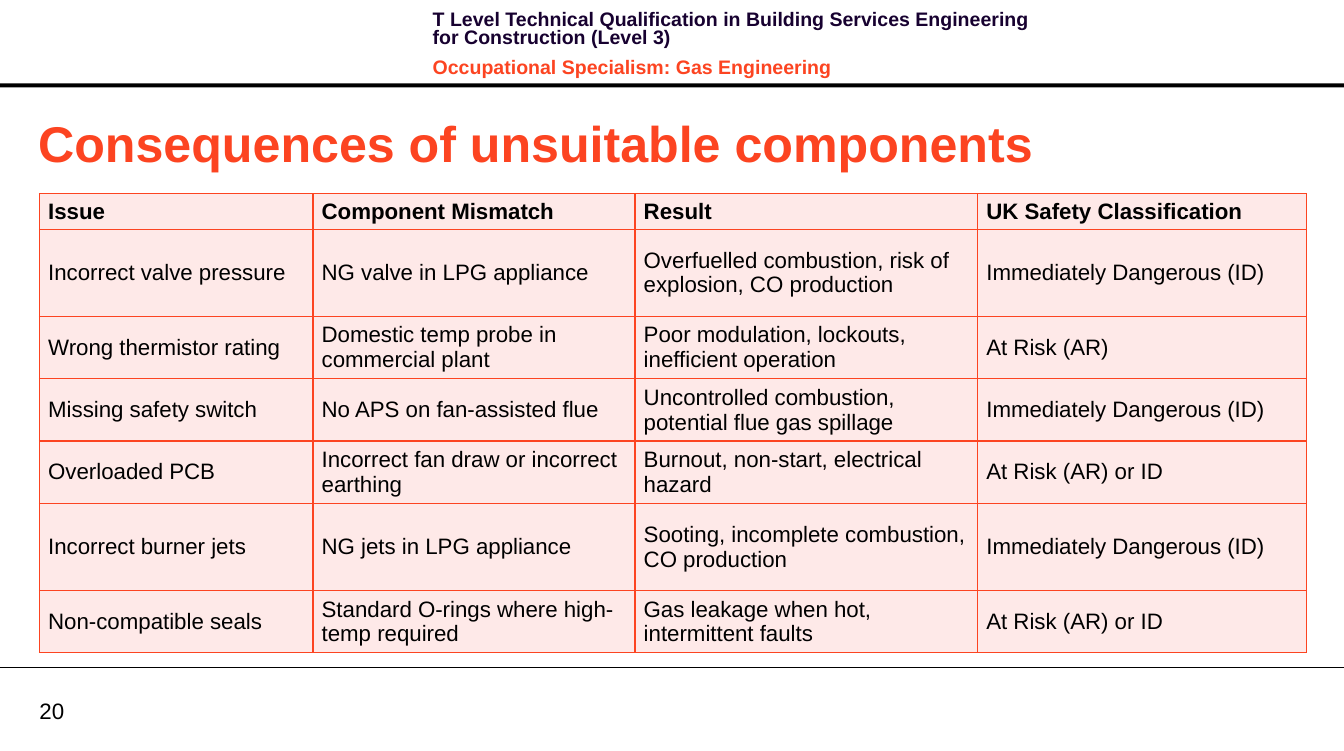
"""Build the slide on the consequences of unsuitable gas components."""
from dataclasses import dataclass

import pptx
import pptx.dml.color
import pptx.enum.shapes
import pptx.enum.text
import pptx.oxml
import pptx.oxml.ns
import pptx.util
from pptx.util import Cm, Pt

TITLE = "Consequences of unsuitable components"
QUALIFICATION = "T Level Technical Qualification in Building Services Engineering for Construction (Level 3)"
SPECIALISM = "Occupational Specialism: Gas Engineering"
PAGE_NUMBER = "20"
ROWS = [
    ("Issue", "Component Mismatch", "Result", "UK Safety Classification"),
    ("Incorrect valve pressure", "NG valve in LPG appliance",
     "Overfuelled combustion, risk of explosion, CO production", "Immediately Dangerous (ID)"),
    ("Wrong thermistor rating", "Domestic temp probe in commercial plant",
     "Poor modulation, lockouts, inefficient operation", "At Risk (AR)"),
    ("Missing safety switch", "No APS on fan-assisted flue",
     "Uncontrolled combustion, potential flue gas spillage", "Immediately Dangerous (ID)"),
    ("Overloaded PCB", "Incorrect fan draw or incorrect earthing",
     "Burnout, non-start, electrical hazard", "At Risk (AR) or ID"),
    ("Incorrect burner jets", "NG jets in LPG appliance",
     "Sooting, incomplete combustion, CO production", "Immediately Dangerous (ID)"),
    ("Non-compatible seals", "Standard O-rings where high-temp required",
     "Gas leakage when hot, intermittent faults", "At Risk (AR) or ID"),
]
HEADER_HEIGHT, SHORT_HEIGHT, TALL_HEIGHT = 0.89, 1.55, 2.21
ROW_HEIGHTS = [HEADER_HEIGHT, TALL_HEIGHT, SHORT_HEIGHT, SHORT_HEIGHT,
               SHORT_HEIGHT, TALL_HEIGHT, SHORT_HEIGHT]
COLUMN_WIDTHS = [6.92, 8.15, 8.67, 8.33]
SLIDE_WIDTH, SLIDE_HEIGHT = 34.01, 19


@dataclass(frozen=True)
class Theme:
    """Colours, font and type sizes of the slide."""
    accent: str = "FC4421"
    navy: str = "170130"
    black: str = "000000"
    tint: str = "FEE9E8"
    font: str = "Arial"
    title_size: int = 36
    header_size: int = 14
    body_size: int = 16


THEME = Theme()


def rgb(colour):
    """Turn a hex string into a colour."""
    return pptx.dml.color.RGBColor.from_string(colour)


def add_run(paragraph, text, size, colour, bold=False):
    """Add one formatted run to a paragraph."""
    run = paragraph.add_run()
    run.text = text
    run.font.name = THEME.font
    run.font.size = Pt(size)
    run.font.bold = bold
    run.font.color.rgb = rgb(colour)


def add_text_frame(slide, left, top, width, height):
    """Add a wrapping text box and return its frame."""
    frame = slide.shapes.add_textbox(Cm(left), Cm(top), Cm(width), Cm(height)).text_frame
    frame.word_wrap = True
    return frame


def add_header(slide):
    """Add the heavy rule and the two header paragraphs."""
    rule = slide.shapes.add_shape(
        pptx.enum.shapes.MSO_SHAPE.RECTANGLE, 0, Cm(2.11), Cm(SLIDE_WIDTH), Cm(0.1))
    rule.shadow.inherit = False
    rule.fill.solid()
    rule.fill.fore_color.rgb = rgb(THEME.black)
    rule.line.fill.background()
    frame = add_text_frame(slide, 10.7, 0.18, 16.18, 1.63)
    qualification, specialism = frame.paragraphs[0], frame.add_paragraph()
    specialism.space_before = Pt(4)
    for paragraph, text, colour in ((qualification, QUALIFICATION, THEME.navy),
                                    (specialism, SPECIALISM, THEME.accent)):
        paragraph.line_spacing = Pt(13.1)
        paragraph.space_after = Pt(4)
        add_run(paragraph, text, THEME.header_size, colour, True)


def add_footer(slide):
    """Add the thin rule and the page number."""
    rule = slide.shapes.add_connector(
        pptx.enum.shapes.MSO_CONNECTOR.STRAIGHT, 0, Cm(16.9), Cm(SLIDE_WIDTH), Cm(16.9))
    rule.line.color.rgb = rgb(THEME.black)
    rule.line.width = Pt(0.75)
    properties = rule._element.spPr
    properties.append(properties.makeelement(pptx.oxml.ns.qn("a:effectLst"), {}))
    frame = add_text_frame(slide, 1, 17.63, 1.63, 0.69)
    frame.margin_left = frame.margin_right = frame.margin_top = frame.margin_bottom = 0
    frame.vertical_anchor = pptx.enum.text.MSO_ANCHOR.MIDDLE
    add_run(frame.paragraphs[0], PAGE_NUMBER, THEME.body_size, THEME.black)


def add_title(slide):
    """Place and fill the title placeholder."""
    title = slide.shapes.title
    title.left, title.top, title.width, title.height = Cm(0.71), Cm(2.7), Cm(32.3), Cm(1.8)
    frame = title.text_frame
    frame.word_wrap = True
    frame.vertical_anchor = pptx.enum.text.MSO_ANCHOR.MIDDLE
    paragraph = frame.paragraphs[0]
    paragraph.alignment = pptx.enum.text.PP_ALIGN.LEFT
    add_run(paragraph, TITLE, THEME.title_size, THEME.accent, True)


def set_borders(cell):
    """Draw an accent line on all four sides of a cell."""
    properties = cell._tc.get_or_add_tcPr()
    for index, side in enumerate(("lnL", "lnR", "lnT", "lnB")):
        properties.insert(index, pptx.oxml.parse_xml(
            f'<a:{side} {pptx.oxml.ns.nsdecls("a")} w="{Pt(1)}"><a:solidFill>'
            f'<a:srgbClr val="{THEME.accent}"/></a:solidFill></a:{side}>'))


def add_issue_table(slide):
    """Add the table of issues, mismatches, results and classes."""
    table = slide.shapes.add_table(
        len(ROWS), len(COLUMN_WIDTHS), Cm(1), Cm(4.9),
        Cm(sum(COLUMN_WIDTHS)), Cm(sum(ROW_HEIGHTS))).table
    table.horz_banding = False
    for column, width in zip(table.columns, COLUMN_WIDTHS):
        column.width = Cm(width)
    for row_index, (row, height, texts) in enumerate(zip(table.rows, ROW_HEIGHTS, ROWS)):
        row.height = Cm(height)
        for cell, text in zip(row.cells, texts):
            cell.fill.solid()
            cell.fill.fore_color.rgb = rgb(THEME.tint)
            cell.margin_left = cell.margin_right = Cm(0.22)
            cell.margin_top = cell.margin_bottom = Cm(0.11)
            cell.vertical_anchor = pptx.enum.text.MSO_ANCHOR.MIDDLE
            set_borders(cell)
            add_run(cell.text_frame.paragraphs[0], text, THEME.body_size,
                    THEME.black, row_index == 0)


def main():
    """Build and save the presentation."""
    presentation = pptx.Presentation()
    presentation.slide_width, presentation.slide_height = Cm(SLIDE_WIDTH), Cm(SLIDE_HEIGHT)
    slide = presentation.slides.add_slide(presentation.slide_layouts[5])
    add_header(slide)
    add_footer(slide)
    add_title(slide)
    add_issue_table(slide)
    presentation.save("out.pptx")


if __name__ == "__main__":
    main()
